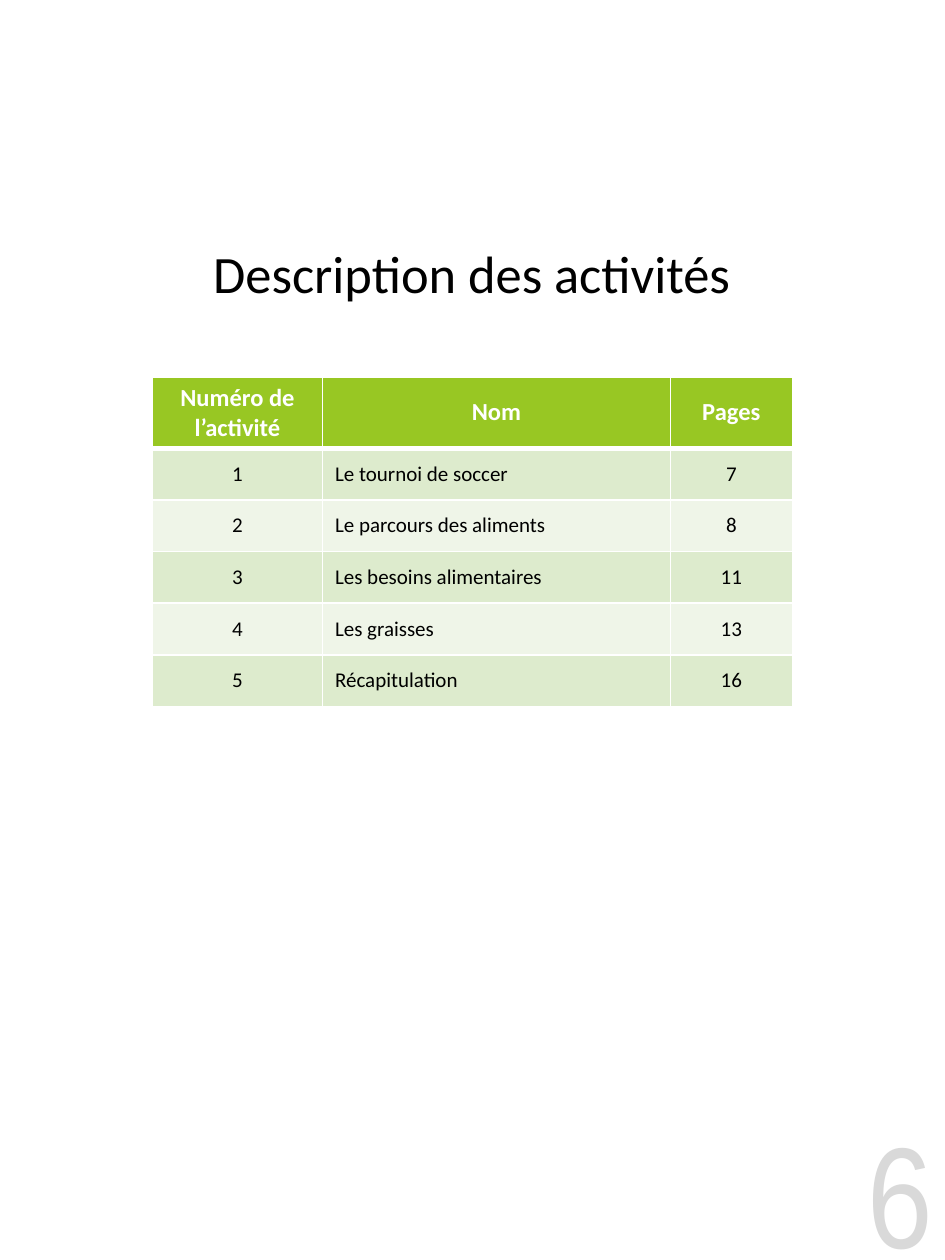
from lxml.etree import SubElement as Sub
from pptx import Presentation
from pptx.dml.color import RGBColor
from pptx.enum.text import MSO_ANCHOR as Anchor, PP_ALIGN as Align
from pptx.oxml.ns import qn
from pptx.util import Inches, Pt

HEAD = ["Numéro de\nl’activité", "Nom", "Pages"]
ROWS = [
    ["1", "Le tournoi de soccer", "7"],
    ["2", "Le parcours des aliments", "8"],
    ["3", "Les besoins alimentaires", "11"],
    ["4", "Les graisses", "13"],
    ["5", "Récapitulation", "16"],
]
WIDTHS = [1.35, 2.76, 0.97]
HEAD_H, ROW_H = 0.56, 0.41
WHITE, BLACK, GREEN, GREY = "FFFFFF", "000000", "98C723", "D9D9D9"
BANDS = ["DDEBCD", "EFF5E8"]


def color(code):
    return RGBColor.from_string(code)


def write(frame, text, size, code, align, face="Calibri", bold=False):
    for i, line in enumerate(text.split("\n")):
        para = frame.add_paragraph() if i else frame.paragraphs[0]
        para.alignment = align
        run = para.add_run()
        run.text = line
        font = run.font
        font.name, font.size, font.bold = face, Pt(size), bold
        font.color.rgb = color(code)


def add_title(slide, text):
    title = slide.shapes.title
    title.left, title.top = Inches(1.41), Inches(1.69)
    title.width, title.height = Inches(4.67), Inches(0.95)
    title.text_frame.vertical_anchor = Anchor.MIDDLE
    write(title.text_frame, text, 30, BLACK, Align.CENTER)


def add_number(slide, text):
    box = slide.shapes.add_textbox(
        Inches(6.28), Inches(8.9), Inches(1.22), Inches(1.1))
    frame = box.text_frame
    frame.word_wrap = True
    frame.vertical_anchor = Anchor.MIDDLE
    write(frame, text, 82, GREY, Align.RIGHT, "Arial Narrow")


def add_edge(cell, side, width):
    props = cell._tc.get_or_add_tcPr()
    line = Sub(props, qn(f"a:ln{side}"), w=str(Pt(width)))
    Sub(Sub(line, qn("a:solidFill")), qn("a:srgbClr"), val=WHITE)


def style_cell(cell, row, col, text):
    top = row == 0
    for side in "LRTB":
        thick = (top and side == "B") or (row == 1 and side == "T")
        add_edge(cell, side, 3 if thick else 1)
    cell.fill.solid()
    cell.fill.fore_color.rgb = color(GREEN if top else BANDS[(row - 1) % 2])
    cell.vertical_anchor = Anchor.MIDDLE
    align = Align.LEFT if col == 1 and not top else Align.CENTER
    write(cell.text_frame, text, 14 if top else 12,
          WHITE if top else BLACK, align, bold=top)


def add_grid(slide):
    data = [HEAD] + ROWS
    table = slide.shapes.add_table(
        len(data), len(HEAD), Inches(1.21), Inches(2.99),
        Inches(sum(WIDTHS)), Inches(HEAD_H + ROW_H * len(ROWS))).table
    for col, width in zip(table.columns, WIDTHS):
        col.width = Inches(width)
    for r, texts in enumerate(data):
        table.rows[r].height = Inches(ROW_H if r else HEAD_H)
        for c, text in enumerate(texts):
            style_cell(table.cell(r, c), r, c, text)


def main():
    deck = Presentation()
    deck.slide_width, deck.slide_height = Inches(7.5), Inches(10)
    slide = deck.slides.add_slide(deck.slide_layouts[5])
    add_number(slide, "6")
    add_grid(slide)
    add_title(slide, "Description des activités")
    deck.save("out.pptx")


if __name__ == "__main__":
    main()
